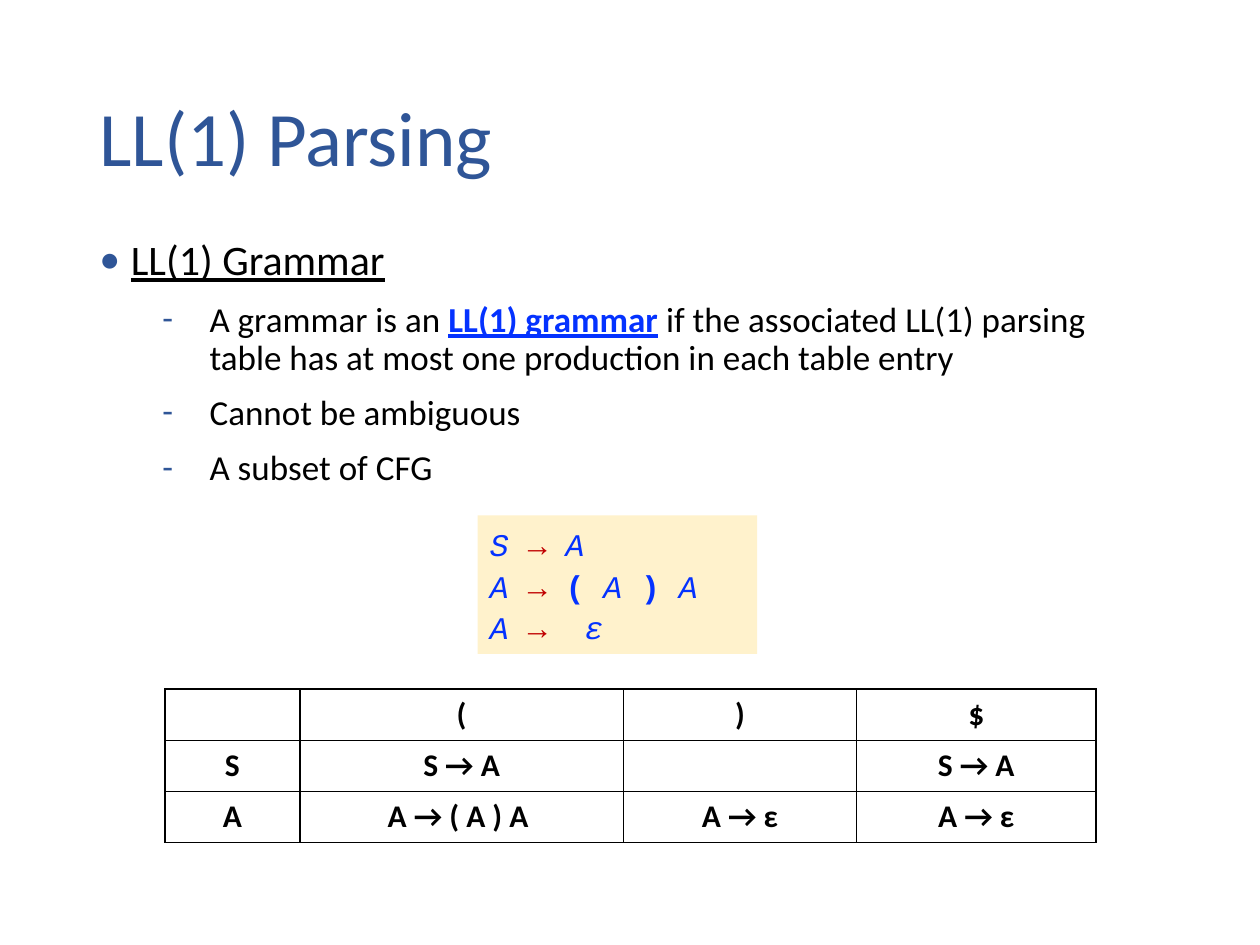
"""Build the LL(1) parsing slide with its grammar and parsing table."""
from dataclasses import dataclass, field

from lxml.etree import SubElement
from pptx import Presentation
from pptx.dml.color import RGBColor
from pptx.enum.shapes import MSO_SHAPE
from pptx.enum.text import MSO_ANCHOR, PP_ALIGN
from pptx.oxml.ns import qn
from pptx.util import Length, Pt

RECTANGLE = MSO_SHAPE.RECTANGLE
TOP, MIDDLE = MSO_ANCHOR.TOP, MSO_ANCHOR.MIDDLE
LEFT, CENTER = PP_ALIGN.LEFT, PP_ALIGN.CENTER


@dataclass(frozen=True)
class Theme:
    """Colours, fonts and type sizes of the slide."""
    heading: str = "2F5597"
    ink: str = "000000"
    symbol: str = "0432FF"
    arrow: str = "C00000"
    panel: str = "FFF2CC"
    sans: str = "Calibri"
    mono: str = "Courier New"
    title_size: Length = Pt(44)
    topic_size: Length = Pt(24)
    point_size: Length = Pt(20)
    small_size: Length = Pt(18)
    border: Length = Pt(1)


THEME = Theme()


@dataclass(frozen=True)
class Box:
    """A rectangle on the page, in points."""
    left: float
    top: float
    width: float
    height: float

    def lengths(self) -> list[Length]:
        """Return the four sides as lengths."""
        return [Pt(side) for side in (self.left, self.top, self.width, self.height)]


@dataclass(frozen=True)
class Span:
    """Text with one look; tracking is in points."""
    text: str
    color: str = THEME.ink
    format: dict = field(default_factory=dict)
    tracking: float = 0


@dataclass(frozen=True)
class Para:
    """Spans with shared paragraph and font formats."""
    spans: list[Span]
    font: dict
    format: dict = field(default_factory=dict)
    bullet: str = ""
    margin: float = 0
    hanging: float = 0


def set_all(target: object, values: dict) -> None:
    """Set every named attribute of the target."""
    for name, value in values.items():
        setattr(target, name, value)


def add_bullet(paragraph, para: Para) -> None:
    """Give a paragraph its bullet and hanging indent."""
    properties = paragraph._p.get_or_add_pPr()
    properties.set("marL", str(Pt(para.margin)))
    properties.set("indent", str(-Pt(para.hanging)))
    color = SubElement(properties, qn("a:buClr"))
    SubElement(color, qn("a:srgbClr"), val=THEME.heading)
    SubElement(properties, qn("a:buFont"), typeface=THEME.sans)
    SubElement(properties, qn("a:buChar"), char=para.bullet)


def write(frame, paras: list[Para]) -> None:
    """Write paragraphs into a text frame."""
    for index, para in enumerate(paras):
        paragraph = frame.add_paragraph() if index else frame.paragraphs[0]
        set_all(paragraph, para.format)
        if para.bullet:
            add_bullet(paragraph, para)
        for span in para.spans:
            run = paragraph.add_run()
            run.text = span.text
            set_all(run.font, para.font | span.format)
            run.font.color.rgb = RGBColor.from_string(span.color)
            if span.tracking:
                run.font._element.set("spc", str(round(span.tracking * 100)))


def add_text(page, box: Box, paras: list[Para], anchor: MSO_ANCHOR = TOP) -> None:
    """Add a wrapping text box."""
    frame = page.shapes.add_textbox(*box.lengths()).text_frame
    set_all(frame, {"word_wrap": True, "vertical_anchor": anchor})
    write(frame, paras)


def add_panel(page, box: Box) -> None:
    """Add the plain panel behind the grammar."""
    panel = page.shapes.add_shape(RECTANGLE, *box.lengths())
    panel.shadow.inherit = False
    panel.fill.solid()
    panel.fill.fore_color.rgb = RGBColor.from_string(THEME.panel)
    panel.line.fill.background()


def add_borders(cell) -> None:
    """Draw a thin line on each side of a cell."""
    properties = cell._tc.get_or_add_tcPr()
    for side in ("lnL", "lnR", "lnT", "lnB"):
        line = SubElement(properties, qn(f"a:{side}"), w=str(THEME.border))
        fill = SubElement(line, qn("a:solidFill"))
        SubElement(fill, qn("a:srgbClr"), val=THEME.ink)


def add_parsing_table(page, box: Box, widths: list[float], rows: list[list[str]]) -> None:
    """Add the bordered parsing table."""
    table = page.shapes.add_table(len(rows), len(widths), *box.lengths()).table
    set_all(table, {"first_row": False, "horz_banding": False})
    for column, width in zip(table.columns, widths):
        column.width = Pt(width)
    font = {"name": THEME.sans, "size": THEME.small_size, "bold": True}
    for row_index, row in enumerate(rows):
        for column_index, text in enumerate(row):
            cell = table.cell(row_index, column_index)
            add_borders(cell)
            cell.fill.background()
            write(cell.text_frame, [Para([Span(text)] if text else [], font, {"alignment": CENTER})])


def symbol(text: str) -> Span:
    """Return an italic grammar symbol."""
    return Span(text, THEME.symbol, {"italic": True})


def terminal(text: str) -> Span:
    """Return a bold terminal."""
    return Span(text, THEME.symbol, {"bold": True})


def main() -> None:
    """Build and save the deck."""
    deck = Presentation()
    set_all(deck, {"slide_width": Pt(720), "slide_height": Pt(540)})
    page = deck.slides.add_slide(deck.slide_layouts[6])

    title_font = {"name": THEME.sans, "size": THEME.title_size}
    title = Para([Span("LL(1) Parsing", THEME.heading)], title_font, {"line_spacing": 0.9})
    add_text(page, Box(49.7, 28.8, 620.6, 104.4), [title], MIDDLE)

    spacing = {"line_spacing": 0.9, "space_before": Pt(10), "alignment": LEFT}
    topic_font = {"name": THEME.sans, "size": THEME.topic_size, "underline": True}
    point_font = {"name": THEME.sans, "size": THEME.point_size}
    points = [
        [
            Span("A grammar is an "),
            Span("LL(1) grammar", THEME.symbol, {"bold": True, "underline": True}),
            Span(" if the associated LL(1) parsing table has at most one production in each table entry"),
        ],
        [Span("Cannot be ambiguous")],
        [Span("A subset of CFG")],
    ]
    body = [Para([Span("LL(1) Grammar")], topic_font, spacing, "•", 18, 18)]
    body += [Para(spans, point_font, spacing, "-", 63, 27) for spans in points]
    add_text(page, Box(49.7, 133.2, 621.4, 178.6), body)

    arrow = Span("→ ", THEME.arrow)
    wide_arrow = Span("→ ", THEME.arrow, tracking=5.4)
    productions = [
        [symbol("S "), arrow, symbol("A")],
        [symbol("A "), arrow, terminal("( "), symbol("A "), terminal(") "), symbol("A")],
        [symbol("A "), wide_arrow, symbol("ε")],
    ]
    code_font = {"name": THEME.mono, "size": THEME.small_size}
    add_panel(page, Box(272.9, 294.5, 159.8, 79.2))
    add_text(page, Box(272.9, 294.5, 205.2, 79.2),
             [Para(spans, code_font, {"line_spacing": 1.1}) for spans in productions])

    add_parsing_table(page, Box(94.3, 393.8, 532, 87.8), [77, 185, 133.2, 136.8], [
        ["", "(", ")", "$"],
        ["S", "S → A", "", "S → A"],
        ["A", "A → ( A ) A ", "A → ε", "A → ε"],
    ])
    deck.save("out.pptx")


if __name__ == "__main__":
    main()
